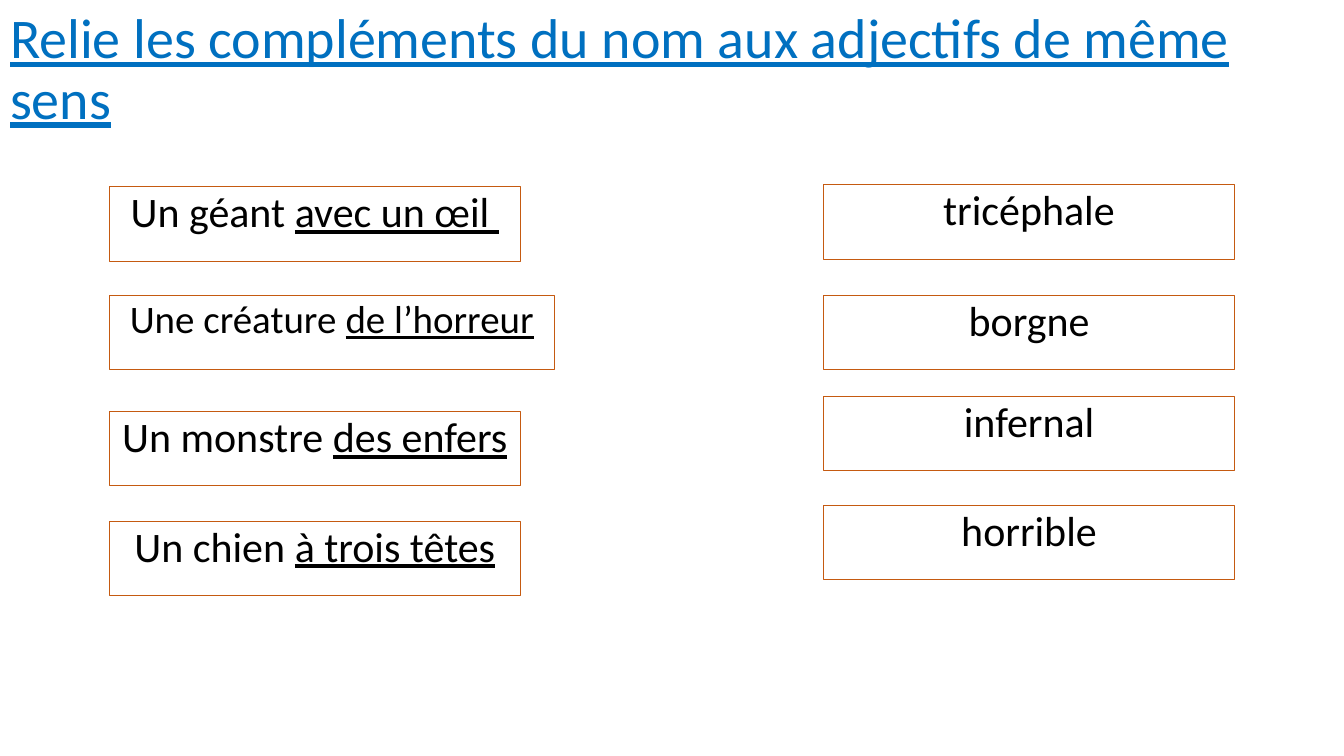
from pptx import Presentation
from pptx import util as u
from pptx.dml import color
from pptx.enum import shapes, text

# Content
TITLE = "Relie les compléments du nom aux adjectifs de même sens"
BOX_W, BOX_H = 10.37, 1.88

# Noun, underlined complement, top (cm), width (cm), text size (pt)
NOUNS = [
    ("Un géant ", "avec un œil ", 4.7, BOX_W, 30),
    ("Une créature ", "de l’horreur", 7.44, 11.23, 27.8),
    ("Un monstre ", "des enfers", 10.36, BOX_W, 30),
    ("Un chien ", "à trois têtes", 13.13, BOX_W, 30),
]
# Adjective, top (cm)
ADJECTIVES = [
    ("tricéphale", 4.65),
    ("borgne", 7.44),
    ("infernal", 9.98),
    ("horrible", 12.73),
]
NOUN_X, ADJECTIVE_X = 2.75, 20.75
BLUE, ORANGE, BLACK = "0070C0", "C55A11", "000000"


def paint(target, hex_colour):
    target.rgb = color.RGBColor.from_string(hex_colour)


def add_run(p, words, size, hex_colour, underline=False):
    r = p.add_run()
    r.text = words
    r.font.name = "Calibri"
    r.font.size = u.Pt(size)
    r.font.underline = underline
    paint(r.font.color, hex_colour)


def add_box(s, x, y, width, size, plain, underlined=""):
    sp = s.shapes.add_shape(shapes.MSO_SHAPE.RECTANGLE, u.Cm(x), u.Cm(y),
                            u.Cm(width), u.Cm(BOX_H))
    sp.shadow.inherit = False
    sp.fill.background()
    paint(sp.line.color, ORANGE)
    sp.line.width = u.Pt(0.75)
    tf = sp.text_frame
    tf.word_wrap = True
    tf.vertical_anchor = text.MSO_ANCHOR.TOP
    p = tf.paragraphs[0]
    p.alignment = text.PP_ALIGN.CENTER
    p.line_spacing = 0.9
    p.space_before = u.Pt(10)
    # Hanging indent
    pPr = p._p.get_or_add_pPr()
    pPr.set("marL", str(u.Cm(0.64)))
    pPr.set("indent", str(-u.Cm(0.64)))
    add_run(p, plain, size, BLACK)
    if underlined:
        add_run(p, underlined, size, BLACK, True)


def main():
    prs = Presentation()
    prs.slide_width, prs.slide_height = u.Cm(33.87), u.Cm(19.05)
    s = prs.slides.add_slide(prs.slide_layouts.get_by_name("Title Only"))

    # Title
    title = s.shapes.title
    title.left, title.top = u.Cm(0), u.Cm(0.2)
    title.width, title.height = u.Cm(33.22), u.Cm(3.18)
    tf = title.text_frame
    tf.word_wrap = True
    tf.auto_size = text.MSO_AUTO_SIZE.NONE
    tf.vertical_anchor = text.MSO_ANCHOR.MIDDLE
    p = tf.paragraphs[0]
    p.alignment = text.PP_ALIGN.LEFT
    p.line_spacing = 0.9
    add_run(p, TITLE, 40, BLUE, True)

    # Nouns with their complements, on the left
    for noun, complement, y, width, size in NOUNS:
        add_box(s, NOUN_X, y, width, size, noun, complement)

    # Adjectives, on the right
    for adjective, y in ADJECTIVES:
        add_box(s, ADJECTIVE_X, y, BOX_W, 30, adjective)

    prs.save("out.pptx")


if __name__ == "__main__":
    main()
